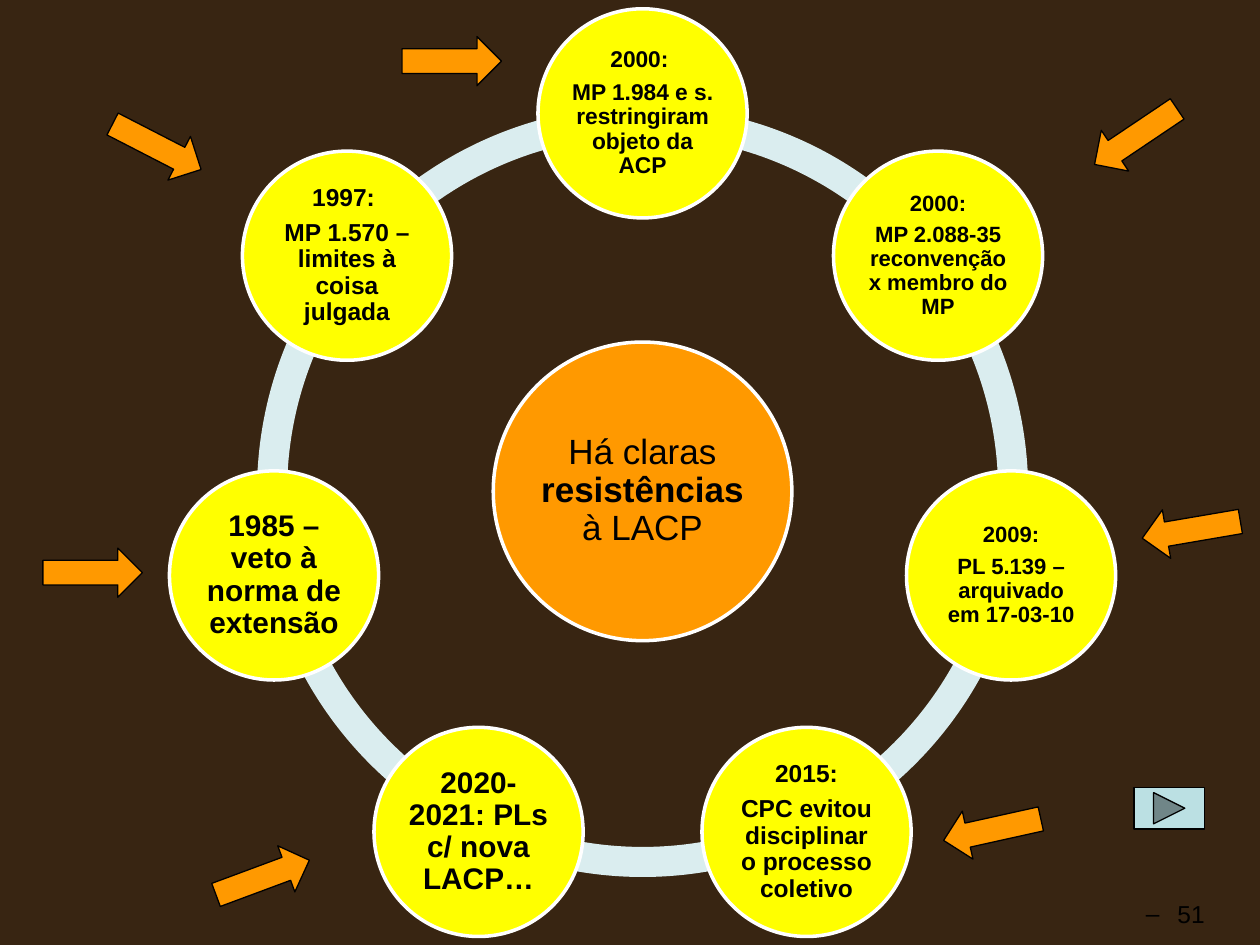
from math import cos, radians, sin

from lxml.etree import SubElement
from pptx import Presentation
from pptx.dml.color import RGBColor
from pptx.enum.shapes import MSO_SHAPE as Kind
from pptx.enum.text import MSO_ANCHOR as Anchor, PP_ALIGN as Align
from pptx.oxml.ns import qn
from pptx.util import Inches, Pt

MID_X, MID_Y = 5.1, 3.9
ORBIT = 3.0
BAND = 6.12
HUB, NODE = 2.37, 1.66
ARROW_W, ARROW_H = 0.79, 0.39

# Clockwise from the top: text size, paragraphs
NODES = [
    (13, ["2000: ", "MP 1.984 e s. restringiram objeto da ACP"]),
    (12.6, ["2000:", "MP 2.088-35 reconvenção x membro do MP"]),
    (12.6, ["2009:", "PL 5.139 – arquivado em 17-03-10"]),
    (14, ["2015:", "CPC evitou disciplinar o processo coletivo"]),
    (17, ["2020-2021: PLs c/ nova LACP…"]),
    (17, ["1985 – veto à norma de extensão"]),
    (14, ["1997: ", "MP 1.570 – limites à coisa julgada"]),
]
STEP = 360 / len(NODES)

# Left, top, rotation
ARROWS = [
    (0.85, 0.97, 27.2),
    (3.19, 0.29, 0),
    (8.62, 0.89, 146.1),
    (9.06, 4.01, 170.3),
    (7.48, 6.39, 167.5),
    (1.69, 6.77, 339.6),
    (0.34, 4.35, 0),
]


def color(text):
    return RGBColor.from_string(text)


def add_shape(slide, kind, x, y, w, h, fill, line=None, width=0.75):
    shape = slide.shapes.add_shape(kind, Inches(x), Inches(y), Inches(w), Inches(h))
    shape.shadow.inherit = False
    shape.fill.solid()
    shape.fill.fore_color.rgb = color(fill)
    if line:
        shape.line.color.rgb = color(line)
        shape.line.width = Pt(width)
    else:
        shape.line.fill.background()
    return shape


def put_text(shape, paras, size, align=Align.CENTER, anchor=Anchor.MIDDLE,
             inset=None, leading=None, after=0):
    """Fill a shape with paragraphs, each a list of (text, bold) runs."""
    frame = shape.text_frame
    frame.word_wrap = True
    frame.vertical_anchor = anchor
    if inset is not None:
        frame.margin_left = frame.margin_right = Inches(inset)
        frame.margin_top = frame.margin_bottom = Inches(inset)
    for i, runs in enumerate(paras):
        para = frame.add_paragraph() if i else frame.paragraphs[0]
        para.alignment = align
        para.line_spacing = leading
        para.space_after = Pt(after)
        for text, bold in runs:
            run = para.add_run()
            run.text = text
            run.font.name = "Arial"
            run.font.size = Pt(size)
            run.font.bold = bold
            run.font.color.rgb = color("000000")
    return frame


def add_disc(slide, x, y, size, fill, paras, pts, inset):
    """Draw a labelled circle centred on x, y."""
    disc = add_shape(slide, Kind.OVAL, x - size / 2, y - size / 2, size, size,
                     fill, "FFFFFF", 2)
    put_text(disc, paras, pts, inset=inset, leading=0.9, after=0.35 * pts)


def add_arc(slide, start):
    arc = add_shape(slide, Kind.BLOCK_ARC, MID_X - BAND / 2, MID_Y - BAND / 2,
                    BAND, BAND, "DAEDEF")
    # Angles are stored in 60000ths of a degree, adjustments in 100000ths
    arc.adjustments[0] = start % 360 * 0.6
    arc.adjustments[1] = (start + STEP) % 360 * 0.6
    arc.adjustments[2] = 0.039


def add_number(slide):
    box = slide.shapes.add_textbox(Inches(7.58), Inches(6.92), Inches(2.08), Inches(0.5))
    frame = put_text(box, [[("51", False)]], 14, Align.RIGHT, Anchor.BOTTOM)
    props = frame.paragraphs[0]._p.get_or_add_pPr()
    props.set("marL", str(Inches(0.25)))
    props.set("indent", str(-Inches(0.25)))
    SubElement(props, qn("a:buFont")).set("typeface", "Arial")
    SubElement(props, qn("a:buChar")).set("char", "–")


def main():
    deck = Presentation()
    deck.slide_width, deck.slide_height = Inches(10), Inches(7.5)
    slide = deck.slides.add_slide(deck.slide_layouts[6])
    slide.background.fill.solid()
    slide.background.fill.fore_color.rgb = color("382512")

    add_number(slide)
    angles = [270 + i * STEP for i in range(len(NODES))]
    for angle in angles:
        add_arc(slide, angle)
    hub = [("Há claras ", False), ("resistências", True), (" à LACP", False)]
    add_disc(slide, MID_X, MID_Y, HUB, "FF9900", [hub], 20, 0.03)
    for angle, (pts, lines) in zip(angles, NODES):
        x = MID_X + ORBIT * cos(radians(angle))
        y = MID_Y + ORBIT * sin(radians(angle))
        add_disc(slide, x, y, NODE, "FFFF00", [[(line, True)] for line in lines], pts, 0.02)

    for x, y, turn in ARROWS:
        arrow = add_shape(slide, Kind.RIGHT_ARROW, x, y, ARROW_W, ARROW_H, "FF9900", "000000")
        arrow.rotation = turn
    add_shape(slide, Kind.ACTION_BUTTON_FORWARD_OR_NEXT, 9, 6.25, 0.56, 0.33,
              "BBE0E3", "000000")
    deck.save("out.pptx")


if __name__ == "__main__":
    main()
